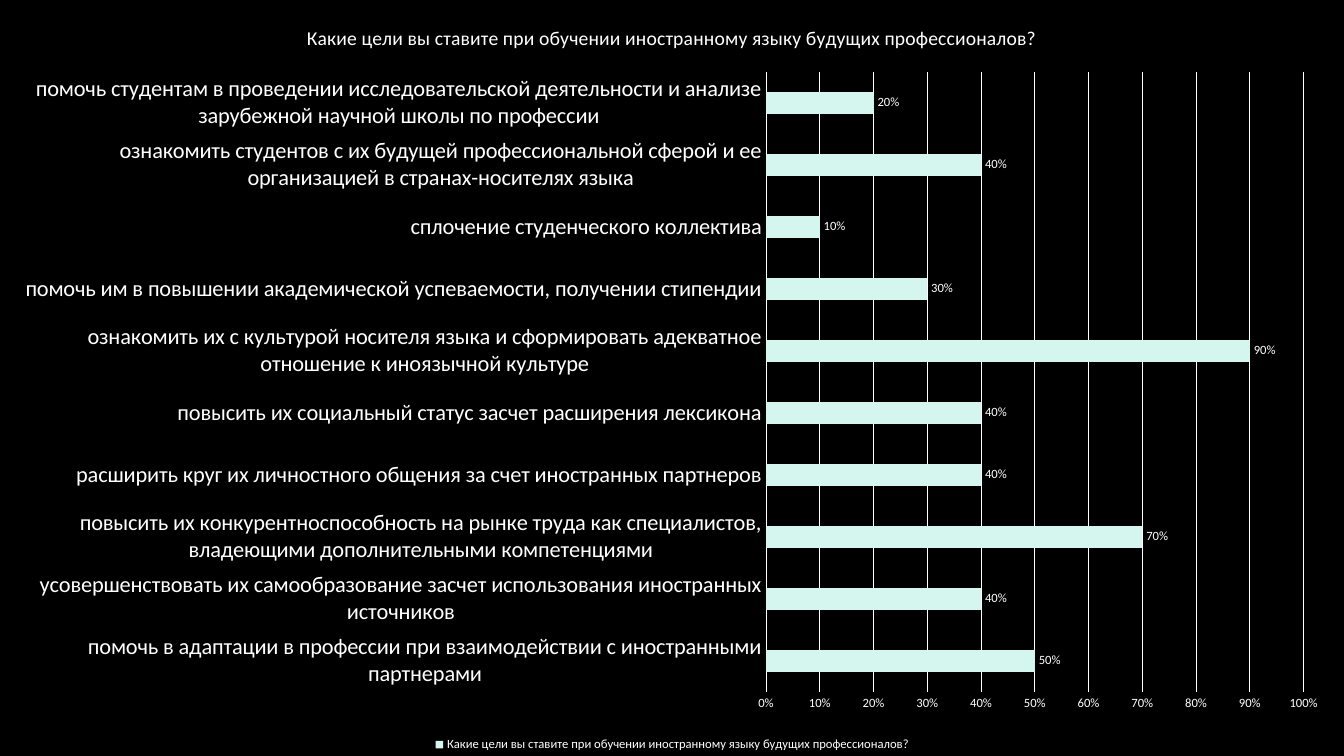
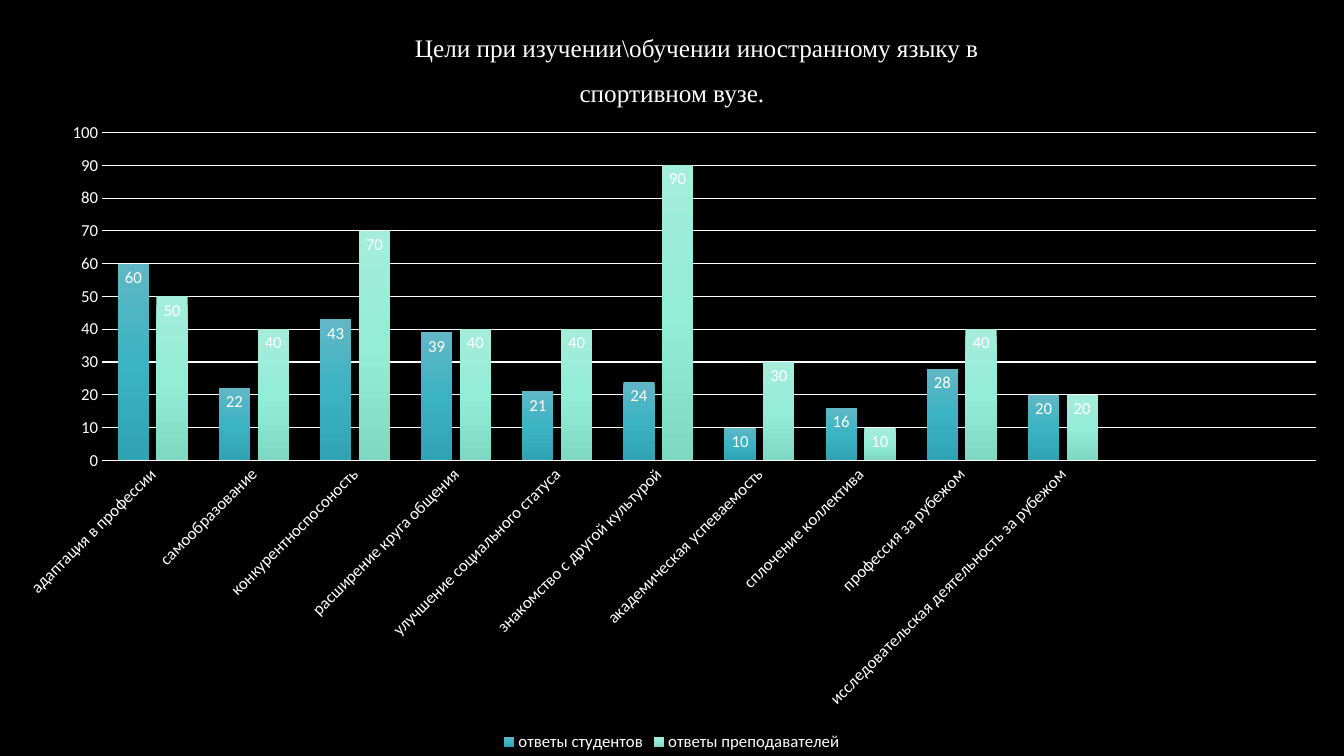
from dataclasses import dataclass

from lxml import etree
from copy import deepcopy
from pptx import Presentation
from pptx.chart import data as chart_data
from pptx.dml.color import RGBColor
from pptx.enum import chart as chart_enum, text
from pptx.oxml import ns
from pptx.util import Pt


@dataclass(frozen=True)
class Theme:
    background: str = "000000"
    ink: str = "FFFFFF"
    mint: str = "D5F6EE"
    teal_stops: tuple = ("61B7C5", "3BB3C3", "2FA3B3")
    aqua_stops: tuple = ("A5EDDB", "93EDD7", "7ED8C2")
    body_font: str = "Calibri"
    title_font: str = "Times New Roman"
    small: int = 9
    medium: int = 12
    chart_title: int = 14
    large: int = 16
    slide_title: int = 18


theme = Theme()
width, height = 960, 540


def style_font(font, size, name=theme.body_font):
    font.name = name
    font.size = Pt(size)
    font.bold = False
    font.color.rgb = RGBColor.from_string(theme.ink)


def add_bar_chart(slide, kind, top, categories, series, size, category_size, maximum,
                  number_format, label_position, gap, line_width, plot_box):
    data = chart_data.CategoryChartData(number_format=number_format)
    data.categories = categories
    for name, values, colours in series:
        data.add_series(name, values)
    chart = slide.shapes.add_chart(kind, Pt(0), Pt(top), Pt(width), Pt(height - top), data).chart
    style_font(chart.font, 10)
    chart.has_title = False
    chart.has_legend = True
    chart.legend.position = chart_enum.XL_LEGEND_POSITION.BOTTOM
    chart.legend.include_in_layout = False
    style_font(chart.legend.font, size)

    for axis, axis_size in ((chart.category_axis, category_size), (chart.value_axis, size)):
        axis.major_tick_mark = axis.minor_tick_mark = chart_enum.XL_TICK_MARK.NONE
        style_font(axis.tick_labels.font, axis_size)
    category_line = chart.category_axis.format.line
    category_line.width = Pt(line_width)
    category_line.color.rgb = RGBColor.from_string(theme.ink)
    value_axis = chart.value_axis
    value_axis.minimum_scale, value_axis.maximum_scale = 0, maximum
    value_axis.major_unit = maximum / 10
    value_axis.tick_labels.number_format = number_format
    value_axis.tick_labels.number_format_is_linked = False
    value_axis.format.line.fill.background()
    value_axis.has_major_gridlines = True
    grid_line = value_axis.major_gridlines.format.line
    grid_line.width = Pt(0.75)
    grid_line.color.rgb = RGBColor.from_string(theme.ink)

    plot = chart.plots[0]
    plot.vary_by_categories = False
    plot.gap_width = gap
    for bars, (name, values, colours) in zip(plot.series, series):
        bars.invert_if_negative = False
        fill = bars.format.fill
        if len(colours) == 1:
            fill.solid()
            fill.fore_color.rgb = RGBColor.from_string(colours[0])
        else:
            fill.gradient()
            fill.gradient_angle = 270
            first_stop = fill.gradient_stops[0]._gs
            first_stop.addnext(deepcopy(first_stop))
            for index, (stop, colour) in enumerate(zip(fill.gradient_stops, colours)):
                stop.position = index / (len(colours) - 1)
                stop.color.rgb = RGBColor.from_string(colour)
        labels = bars.data_labels
        labels.show_value = True
        labels.position = label_position
        labels.number_format = number_format
        labels.number_format_is_linked = False
        style_font(labels.font, size)

    plot_area = chart._chartSpace.find(".//" + ns.qn("c:plotArea"))
    for old_layout in plot_area.findall(ns.qn("c:layout")):
        plot_area.remove(old_layout)
    layout = etree.Element(ns.qn("c:layout"))
    manual = etree.SubElement(layout, ns.qn("c:manualLayout"))
    settings = [("layoutTarget", "inner"), ("xMode", "edge"), ("yMode", "edge")]
    for tag, value in settings + list(zip("xywh", plot_box)):
        etree.SubElement(manual, ns.qn("c:" + tag)).set("val", str(value))
    plot_area.insert(0, layout)
    return chart


presentation = Presentation()
presentation.slide_width, presentation.slide_height = Pt(width), Pt(height)
master_fill = presentation.slide_master.background.fill
master_fill.solid()
master_fill.fore_color.rgb = RGBColor.from_string(theme.background)
title_only, blank = presentation.slide_layouts[5], presentation.slide_layouts[6]

question = "Какие цели вы ставите при обучении иностранному языку будущих профессионалов?"
teacher_goals = {
    "помочь в адаптации в профессии при взаимодействии с иностранными партнерами": 0.5,
    "усовершенствовать их самообразование засчет использования иностранных источников": 0.4,
    "повысить их конкурентноспособность на рынке труда как специалистов, "
    "владеющими дополнительными компетенциями": 0.7,
    "расширить круг их личностного общения за счет иностранных партнеров": 0.4,
    "повысить их социальный статус засчет расширения лексикона": 0.4,
    "ознакомить их с культурой носителя языка и сформировать адекватное "
    "отношение к иноязычной культуре": 0.9,
    "помочь им в повышении академической успеваемости, получении стипендии": 0.3,
    "сплочение студенческого коллектива": 0.1,
    "ознакомить студентов с их будущей профессиональной сферой и ее "
    "организацией в странах-носителях языка": 0.4,
    "помочь студентам в проведении исследовательской деятельности и анализе "
    "зарубежной научной школы по профессии": 0.2,
}
slide = presentation.slides.add_slide(blank)
chart = add_bar_chart(
    slide, chart_enum.XL_CHART_TYPE.BAR_CLUSTERED, 0, list(teacher_goals),
    [(question, list(teacher_goals.values()), (theme.mint,))],
    theme.small, theme.large, 1, "0%", chart_enum.XL_LABEL_POSITION.OUTSIDE_END,
    182, 0.75, (0.57, 0.095, 0.4, 0.82))
chart.has_title = True
chart.chart_title.include_in_layout = False
paragraph = chart.chart_title.text_frame.paragraphs[0]
paragraph.text = question
style_font(paragraph.font, theme.chart_title)

goals = [
    ("адаптация в профессии", 60, 50),
    ("самообразование", 22, 40),
    ("конкурентноспосоность", 43, 70),
    ("расширение круга общения", 39, 40),
    ("улучшение социального статуса", 21, 40),
    ("знакомство с другой культурой", 24, 90),
    ("академическая успеваемость", 10, 30),
    ("сплочение коллектива", 16, 10),
    ("профессия за рубежом", 28, 40),
    ("исследовательская деятельность за рубежом", 20, 20),
    ("", None, None),
    ("", None, None),
]
names, students, teachers = zip(*goals)
slide = presentation.slides.add_slide(title_only)
chart = add_bar_chart(
    slide, chart_enum.XL_CHART_TYPE.COLUMN_CLUSTERED, 78, names,
    [("ответы студентов", students, theme.teal_stops),
     ("ответы преподавателей", teachers, theme.aqua_stops)],
    theme.medium, theme.medium, 100, "General", chart_enum.XL_LABEL_POSITION.INSIDE_END,
    100, 1, (0.076, 0.036, 0.903, 0.507))
chart.plots[0].overlap = -24
label_body = chart.category_axis._element.find(ns.qn("c:txPr")).find(ns.qn("a:bodyPr"))
label_body.set("rot", "-2700000")
label_body.set("vert", "horz")

title = slide.shapes.title
title.left, title.top, title.width, title.height = Pt(240), Pt(8.6), Pt(480), Pt(69)
frame = title.text_frame
frame.word_wrap = True
frame.auto_size = text.MSO_AUTO_SIZE.NONE
frame.vertical_anchor = text.MSO_ANCHOR.TOP
paragraph = frame.paragraphs[0]
paragraph.text = "Цели при изучении\\обучении иностранному языку в спортивном вузе."
paragraph.alignment = text.PP_ALIGN.CENTER
paragraph.line_spacing = 1.5
paragraph.space_after = Pt(8)
paragraph._p.get_or_add_pPr().set("indent", str(Pt(35.4)))
style_font(paragraph.font, theme.slide_title, theme.title_font)

presentation.save("out.pptx")
